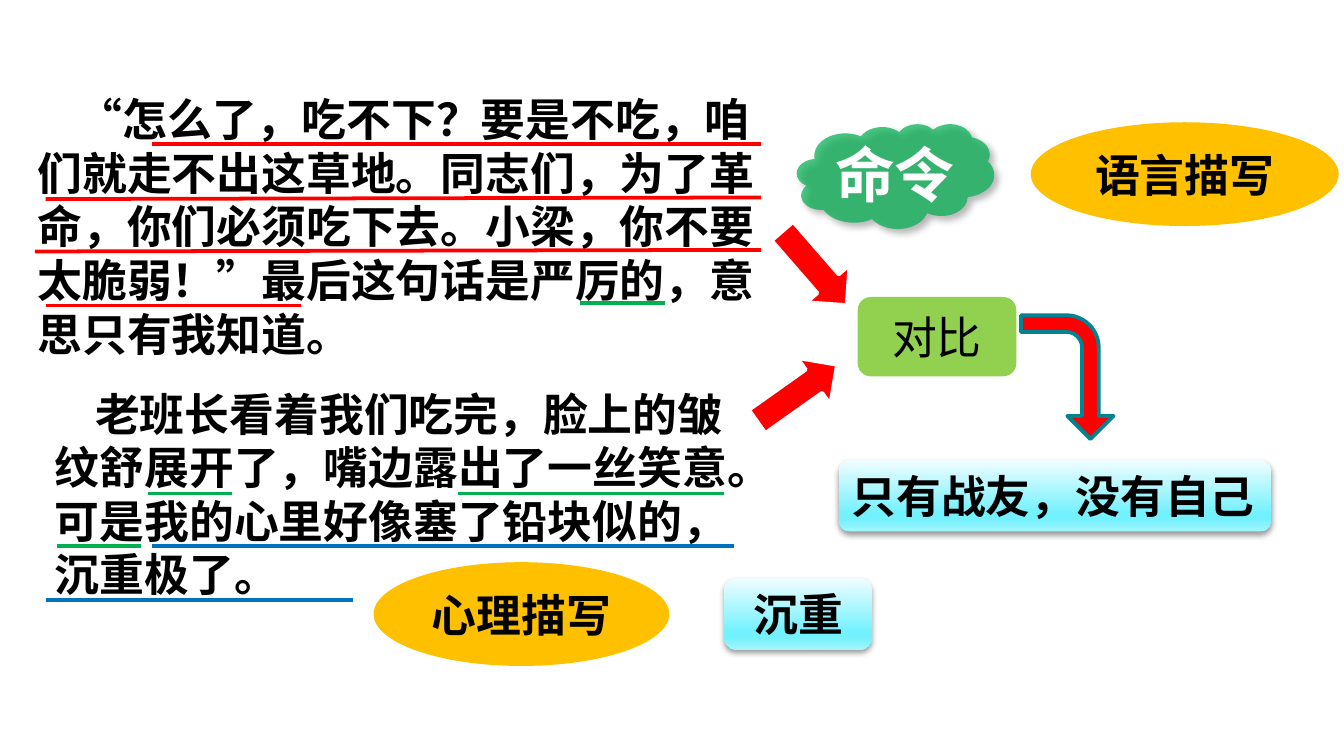
from typing import NamedTuple, Optional

from lxml.etree import SubElement
from pptx import Presentation
from pptx.dml.color import RGBColor
from pptx.enum.shapes import MSO_CONNECTOR, MSO_SHAPE
from pptx.enum.text import MSO_ANCHOR, PP_ALIGN
from pptx.oxml.ns import qn
from pptx.util import Cm, Pt

COLORS = {
    "white": "FFFFFF", "black": "000000", "red": "FF0000", "green": "00B050",
    "blue": "0070C0", "gold": "FFC000", "lime": "92D050", "teal": "018492",
}
AQUA_STOPS = ((0, "F0FDFF"), (74, "74F1FE"), (83, "74F1FE"), (100, "A3F6FE"))
CJK_FONT = "Noto Sans CJK SC"
LATIN_FONT = "Times New Roman"


class Box(NamedTuple):
    """Left, top, width and height in centimetres."""
    left: float
    top: float
    width: float
    height: float


class Shadow(NamedTuple):
    opacity: int
    blur: float
    distance: float
    angle: int


class Passage(NamedTuple):
    text: str
    box: Box


class Label(NamedTuple):
    text: str
    box: Box
    kind: MSO_SHAPE
    fill: Optional[str]  # None gives the aqua gradient
    bold: bool = True
    align: PP_ALIGN = PP_ALIGN.CENTER


class Arrow(NamedTuple):
    box: Box
    kind: MSO_SHAPE
    rotation: float
    line: str
    adjustments: tuple = ()


class Underline(NamedTuple):
    color: str
    left: float
    right: float
    start_y: float
    end_y: float
    weight: float = 2


PASSAGES = [
    Passage("老班长看着我们吃完，脸上的皱纹舒展开了，嘴边露出了一丝笑意。"
            "可是我的心里好像塞了铅块似的，沉重极了。", Box(0.86, 7.11, 13.51, 4.29)),
    Passage("“怎么了，吃不下？要是不吃，咱们就走不出这草地。同志们，为了革命，"
            "你们必须吃下去。小梁，你不要太脆弱！”最后这句话是严厉的，意思只有我知道。",
            Box(0.53, 1.55, 14.53, 5.33)),
]
LABELS = [
    Label("语言描写", Box(19.48, 2.31, 5.82, 1.96), MSO_SHAPE.OVAL, "gold"),
    Label("对比", Box(16.21, 5.61, 3, 1.5), MSO_SHAPE.ROUNDED_RECTANGLE, "lime", bold=False),
    Label("只有战友，没有自己", Box(15.85, 8.69, 8.18, 1.35),
          MSO_SHAPE.ROUNDED_RECTANGLE, None, align=PP_ALIGN.LEFT),
    Label("心理描写", Box(7.06, 10.62, 5.59, 1.96), MSO_SHAPE.OVAL, "gold"),
    Label("沉重", Box(13.69, 10.92, 2.79, 1.35), MSO_SHAPE.ROUNDED_RECTANGLE, None),
]
ARROWS = [
    Arrow(Box(14.86, 4.14, 1.07, 1.85), MSO_SHAPE.DOWN_ARROW, 319, "white"),
    Arrow(Box(14.53, 6.5, 1.07, 1.85), MSO_SHAPE.DOWN_ARROW, 234.7, "white"),
    Arrow(Box(19, 6.25, 2.34, 1.75), MSO_SHAPE.BENT_ARROW, 90, "teal",
          (0.18, 0.25, 0.25, 0.35)),
]
UNDERLINES = [
    Underline("green", 10.97, 12.57, 5.72, 5.72),
    Underline("green", 2.79, 4.39, 9.32, 9.32),
    Underline("green", 8.66, 13.69, 9.32, 9.32),
    Underline("green", 1.07, 2.67, 10.31, 10.31),
    Underline("red", 2.87, 14.38, 2.72, 2.72, 2.25),
    Underline("red", 0.86, 14.38, 3.76, 3.73),
    Underline("red", 0.66, 14.38, 4.75, 4.72),
    Underline("red", 0.86, 5.69, 5.77, 5.77),
    Underline("blue", 2.87, 13.87, 10.31, 10.31),
    Underline("blue", 0.86, 6.68, 11.33, 11.33),
]


def rgb(name: str) -> RGBColor:
    return RGBColor.from_string(COLORS[name])


def lengths(box: Box) -> list:
    return [Cm(value) for value in box]


def add_filled_shape(shapes, kind: MSO_SHAPE, box: Box, fill: str):
    shape = shapes.add_shape(kind, *lengths(box))
    shape.shadow.inherit = False
    shape.fill.solid()
    shape.fill.fore_color.rgb = rgb(fill)
    shape.line.fill.background()
    return shape


def set_gradient(shape) -> None:
    """Fill the shape from top to bottom with the aqua stops."""
    shape.fill.gradient()
    shape.fill.gradient_angle = 270
    stop_list = shape._element.spPr.find(qn("a:gradFill")).find(qn("a:gsLst"))
    for stop in list(stop_list):
        stop_list.remove(stop)
    for position, color in AQUA_STOPS:
        stop = SubElement(stop_list, qn("a:gs"), pos=str(position * 1000))
        SubElement(stop, qn("a:srgbClr"), val=color)


def set_shadow(shape, shadow: Shadow) -> None:
    effects = shape._element.spPr.find(qn("a:effectLst"))
    outer = SubElement(effects, qn("a:outerShdw"), blurRad=str(Pt(shadow.blur)),
                       dist=str(Pt(shadow.distance)), dir=str(shadow.angle * 60000),
                       rotWithShape="0")
    color = SubElement(outer, qn("a:srgbClr"), val=COLORS["black"])
    SubElement(color, qn("a:alpha"), val=str(shadow.opacity * 1000))


def write_text(shape, text: str, font_name: str, size: int = 24, color: str = "black",
               bold: bool = True, align: PP_ALIGN = PP_ALIGN.CENTER):
    frame = shape.text_frame
    frame.word_wrap = True
    frame.vertical_anchor = MSO_ANCHOR.MIDDLE
    frame.margin_left = frame.margin_right = Cm(0.18)
    frame.margin_top = frame.margin_bottom = Cm(0.1)
    paragraph = frame.paragraphs[0]
    paragraph.alignment = align
    run = paragraph.add_run()
    run.text = text
    font = paragraph.font
    font.name, font.size, font.bold = font_name, Pt(size), bold
    font.color.rgb = rgb(color)
    SubElement(run._r.get_or_add_rPr(), qn("a:ea"), typeface=CJK_FONT)
    return paragraph


def add_passage(shapes, passage: Passage) -> None:
    shape = add_filled_shape(shapes, MSO_SHAPE.RECTANGLE, passage.box, "white")
    paragraph = write_text(shape, passage.text, CJK_FONT, align=PP_ALIGN.LEFT)
    paragraph.line_spacing = Pt(28.7)
    paragraph._p.get_or_add_pPr().set("indent", str(Cm(0.76)))
    shape.text_frame.vertical_anchor = MSO_ANCHOR.TOP
    shape.text_frame.margin_top = Cm(0.19)


def add_label(shapes, label: Label) -> None:
    shape = add_filled_shape(shapes, label.kind, label.box, label.fill or "white")
    if label.fill is None:
        set_gradient(shape)
        set_shadow(shape, Shadow(38, 3.1, 1.6, 90))
    write_text(shape, label.text, LATIN_FONT, bold=label.bold, align=label.align)


def add_arrow(shapes, arrow: Arrow) -> None:
    shape = add_filled_shape(shapes, arrow.kind, arrow.box, "red")
    shape.rotation = arrow.rotation
    shape.line.color.rgb = rgb(arrow.line)
    shape.line.width = Pt(2)
    for index, value in enumerate(arrow.adjustments):
        shape.adjustments[index] = value


def add_command_cloud(shapes) -> None:
    group = shapes.add_group_shape()
    cloud = add_filled_shape(group.shapes, MSO_SHAPE.CLOUD, Box(15.06, 2.34, 3.73, 1.98), "green")
    color = cloud._element.spPr.find(qn("a:solidFill"))[0]
    SubElement(color, qn("a:alpha"), val="71000")
    set_shadow(cloud, Shadow(40, 4, 3, 45))
    caption = group.shapes.add_textbox(*lengths(Box(15.52, 2.46, 2.79, 1.63)))
    write_text(caption, "命令", CJK_FONT, 32, "white")
    caption.text_frame.word_wrap = False


def add_underline(shapes, underline: Underline) -> None:
    connector = shapes.add_connector(
        MSO_CONNECTOR.STRAIGHT, Cm(underline.left), Cm(underline.start_y),
        Cm(underline.right), Cm(underline.end_y))
    connector.line.color.rgb = rgb(underline.color)
    connector.line.width = Pt(underline.weight)
    SubElement(connector._element.spPr, qn("a:effectLst"))


def main() -> None:
    presentation = Presentation()
    presentation.slide_width, presentation.slide_height = Cm(25.4), Cm(14.28)
    shapes = presentation.slides.add_slide(presentation.slide_layouts[6]).shapes
    for passage in PASSAGES:
        add_passage(shapes, passage)
    for label in LABELS:
        add_label(shapes, label)
    for arrow in ARROWS:
        add_arrow(shapes, arrow)
    add_command_cloud(shapes)
    for underline in UNDERLINES:
        add_underline(shapes, underline)
    presentation.save("out.pptx")


if __name__ == "__main__":
    main()
